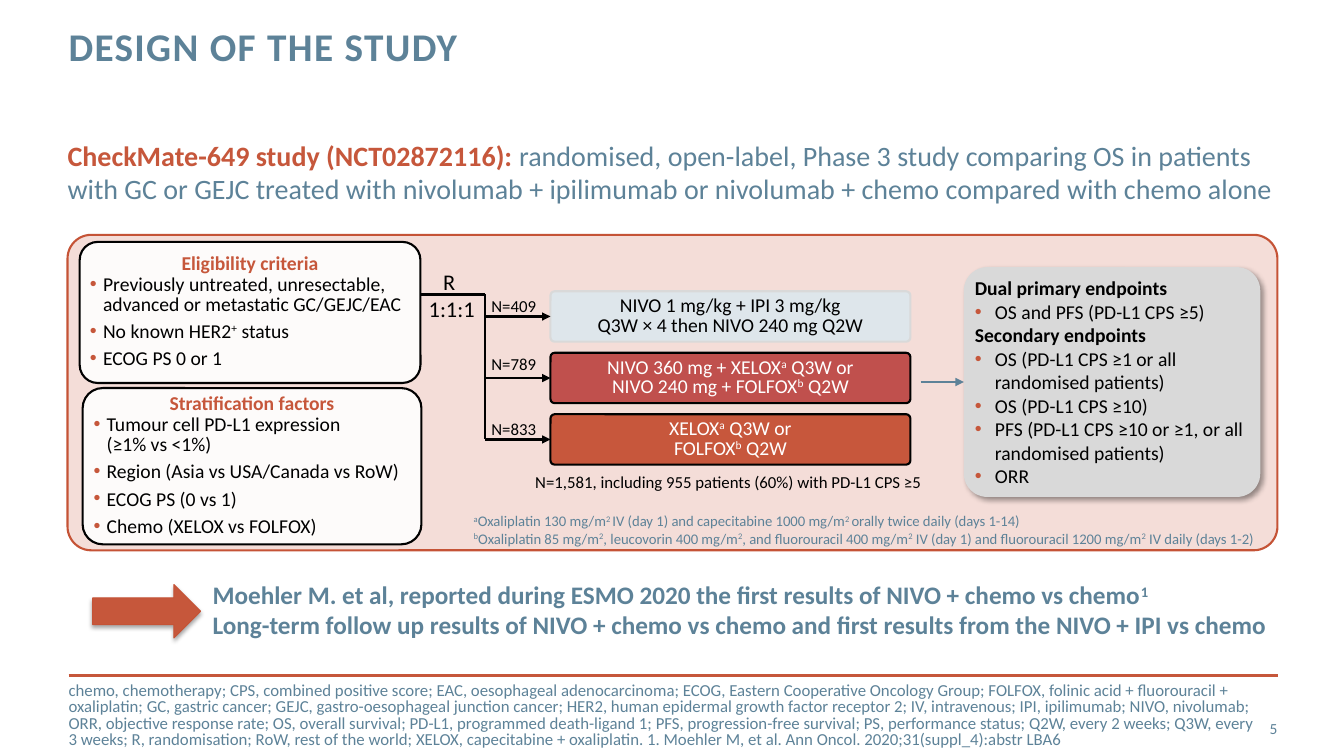
from dataclasses import dataclass
from typing import Optional

from lxml import etree
from pptx import Presentation
from pptx.dml.color import RGBColor
from pptx.enum.shapes import MSO_CONNECTOR, MSO_SHAPE
from pptx.enum.text import MSO_ANCHOR, PP_ALIGN
from pptx.oxml.ns import qn
from pptx.util import Inches, Pt

STRAIGHT = MSO_CONNECTOR.STRAIGHT
ROUNDED, RIGHT_ARROW = MSO_SHAPE.ROUNDED_RECTANGLE, MSO_SHAPE.RIGHT_ARROW
TOP, MIDDLE = MSO_ANCHOR.TOP, MSO_ANCHOR.MIDDLE
LEFT, CENTER, RIGHT = PP_ALIGN.LEFT, PP_ALIGN.CENTER, PP_ALIGN.RIGHT
FONT = "Calibri"
LEFT_SIDE = 1
COLORS = {
    "slate": "5D8298", "rust": "C6573B", "rust_edge": "C55336", "blush": "F4DDD8",
    "paper": "FDFBFA", "mist": "DEE6EB", "gray": "D9D9D9", "red": "C0504D",
    "orange": "C7573C", "black": "000000", "white": "FFFFFF",
}


@dataclass
class Para:
    """Text between ^ marks is superscript, between ~ marks bold rust."""
    text: str
    size: float = 14
    color: str = "black"
    bold: bool = False
    align: PP_ALIGN = LEFT
    indent: float = 0  # hanging indent of a bullet, in inches
    leading: Optional[float] = None  # a length, or a multiple of the line
    before: float = 0
    after: float = 0
    tracking: int = 0


@dataclass
class Box:
    left: float
    top: float
    width: float
    height: float


@dataclass
class Panel:
    box: Box
    fill: str
    edge: Optional[str] = None
    edge_width: float = 1.5
    corner: float = 0
    kind: MSO_SHAPE = ROUNDED


@dataclass
class Shadow:
    alpha: int
    blur: float
    distance: float
    angle: int


@dataclass
class Arm:
    patients: str
    label_top: float
    fill: str
    edge: str
    color: str
    lines: tuple[str, str]


def rgb(name: str) -> RGBColor:
    return RGBColor.from_string(COLORS[name])


def write(frame, paras: list[Para], insets=(0.1, 0.05, 0.1, 0.05), anchor=TOP, wrap=True) -> None:
    frame.word_wrap, frame.vertical_anchor = wrap, anchor
    (frame.margin_left, frame.margin_top,
     frame.margin_right, frame.margin_bottom) = map(Inches, insets)
    for index, para in enumerate(paras):
        p = frame.paragraphs[0] if index == 0 else frame.add_paragraph()
        p.alignment = para.align
        if para.indent:
            props = p._p.get_or_add_pPr()
            props.set("marL", str(Inches(para.indent)))
            props.set("indent", str(-Inches(para.indent)))
            tint = etree.SubElement(props, qn("a:buClr"))
            etree.SubElement(tint, qn("a:srgbClr"), val=COLORS["rust"])
            etree.SubElement(props, qn("a:buFont"), typeface="Arial")
            etree.SubElement(props, qn("a:buChar"), char="•")
        if para.leading:
            p.line_spacing = para.leading
        if para.before or para.after:
            p.space_before, p.space_after = Pt(para.before), Pt(para.after)
        p.font.name, p.font.size, p.font.bold = FONT, Pt(para.size), para.bold
        p.font.color.rgb = rgb(para.color)
        for row, line in enumerate(para.text.split("\n")):
            if row:
                p.add_line_break()
            for strong, phrase in enumerate(line.split("~")):
                for raised, piece in enumerate(phrase.split("^")):
                    if not piece:
                        continue
                    run = p.add_run()
                    run.text = piece
                    if raised % 2:
                        run._r.get_or_add_rPr().set("baseline", "30000")
                    if strong % 2:
                        run.font.bold, run.font.color.rgb = True, rgb("rust")
                    if para.tracking:
                        run._r.get_or_add_rPr().set("spc", str(para.tracking * 100))


def add_text(shapes, box: Box, paras: list[Para], **layout) -> None:
    area = shapes.add_textbox(*map(Inches, (box.left, box.top, box.width, box.height)))
    write(area.text_frame, paras, **layout)


def add_panel(shapes, panel: Panel, shadow: Optional[Shadow] = None):
    box = panel.box
    shape = shapes.add_shape(panel.kind, *map(Inches, (box.left, box.top, box.width, box.height)))
    shape.shadow.inherit = False
    if panel.corner:
        shape.adjustments[0] = panel.corner
    shape.fill.solid()
    shape.fill.fore_color.rgb = rgb(panel.fill)
    if panel.edge:
        shape.line.color.rgb, shape.line.width = rgb(panel.edge), Pt(panel.edge_width)
    else:
        shape.line.fill.background()
    if shadow:
        outer = etree.SubElement(
            shape._element.spPr.find(qn("a:effectLst")), qn("a:outerShdw"),
            blurRad=str(Pt(shadow.blur)), dist=str(Pt(shadow.distance)),
            dir=str(shadow.angle * 60000), rotWithShape="0")
        tint = etree.SubElement(outer, qn("a:srgbClr"), val=COLORS["black"])
        etree.SubElement(tint, qn("a:alpha"), val=str(shadow.alpha * 1000))
    return shape


def add_line(shapes, x1: float, y1: float, x2: float, y2: float,
             color: str = "black", width: float = 2, target=None) -> None:
    line = shapes.add_connector(STRAIGHT, *map(Inches, (x1, y1, x2, y2)))
    line.line.color.rgb, line.line.width = rgb(color), Pt(width)
    if target is not None:
        line.end_connect(target, LEFT_SIDE)
        etree.SubElement(line.line._get_or_add_ln(), qn("a:tailEnd"), type="triangle")
    etree.SubElement(line._element.spPr, qn("a:effectLst"))


def criteria(heading: str, items: list[str]) -> list[Para]:
    return [Para(heading, color="rust", bold=True, align=CENTER, leading=Pt(14))] + [
        Para(item, indent=0.13, leading=Pt(14), before=1, after=4.5) for item in items]


def endpoints(heading: str, items: list[str]) -> list[Para]:
    return [Para(heading, bold=True)] + [Para(item, indent=0.2) for item in items]


ABBREVIATIONS = (
    "chemo, chemotherapy; CPS, combined positive score; EAC, oesophageal adenocarcinoma; ECOG, Eastern "
    "Cooperative Oncology Group; FOLFOX, folinic acid + fluorouracil + oxaliplatin; GC, gastric cancer; GEJC, "
    "gastro-oesophageal junction cancer; HER2, human epidermal growth factor receptor 2; IV, intravenous; IPI, "
    "ipilimumab; NIVO, nivolumab; ORR, objective response rate; OS, overall survival; PD-L1, programmed "
    "death-ligand 1; PFS, progression-free survival; PS, performance status; Q2W, every 2 weeks; Q3W, every 3 "
    "weeks; R, randomisation; RoW, rest of the world; XELOX, capecitabine + oxaliplatin. 1. Moehler M, et al. "
    "Ann Oncol. 2020;31(suppl_4):abstr LBA6")
ARMS = [
    Arm("N=409", 2.88, "mist", "gray", "black",
        ("NIVO 1 mg/kg + IPI 3 mg/kg", "Q3W × 4 then NIVO 240 mg Q2W")),
    Arm("N=789", 3.46, "red", "black", "white",
        ("NIVO 360 mg + XELOX^a^ Q3W or", "NIVO 240 mg + FOLFOX^b^ Q2W")),
    Arm("N=833", 4.11, "orange", "black", "white", ("XELOX^a^ Q3W or", "FOLFOX^b^ Q2W")),
]
ARM_LEFT, ARM_TOP, ARM_STEP, ARM_HEIGHT = 5.46, 2.89, 0.61, 0.5
TRUNK_X, TRUNK_TOP = 4.81, 2.92
NO_INSETS = (0, 0, 0, 0)
TIGHT = (0.05, 0.05, 0.05, 0.05)


def main() -> None:
    prs = Presentation()
    prs.slide_width, prs.slide_height = Inches(13.33), Inches(7.5)
    shapes = prs.slides.add_slide(prs.slide_layouts[6]).shapes

    # Title, study summary and footer
    add_line(shapes, 0.68, 6.7, 12.68, 6.7, "rust")
    add_text(shapes, Box(11.81, 7.03, 0.86, 0.4), [Para("5", 11, "slate", align=RIGHT)],
             insets=NO_INSETS, anchor=MIDDLE)
    add_text(shapes, Box(0.68, 0.27, 9.56, 0.88),
             [Para("DESIGN OF THE STUDY", 28, "slate", True, leading=Pt(30), tracking=1)], insets=NO_INSETS)
    add_text(shapes, Box(0.68, 6.76, 11.82, 0.69), [Para(ABBREVIATIONS, 12, "slate", leading=0.8)],
             insets=NO_INSETS, anchor=MIDDLE)
    add_text(shapes, Box(0.67, 1.32, 12.22, 0.77), [Para(
        "~CheckMate-649 study (NCT02872116): ~randomised, open-label, Phase 3 study comparing OS in patients with "
        "GC or GEJC treated with nivolumab + ipilimumab or nivolumab + chemo compared with chemo alone",
        20, "slate")], insets=(0, 0.05, 0.1, 0.05))

    # Patients
    add_panel(shapes, Panel(Box(0.67, 2.33, 12, 3.13), "blush", "rust_edge", corner=0.075))
    add_line(shapes, 3.99, TRUNK_TOP, TRUNK_X, TRUNK_TOP, width=2.25)
    for box, paras in (
        (Box(0.79, 2.4, 3.38, 1.4), criteria("Eligibility criteria", [
            "Previously untreated, unresectable, advanced or metastatic GC/GEJC/EAC",
            "No known HER2^+^ status", "ECOG PS 0 or 1"])),
        (Box(0.82, 3.85, 3.36, 1.55), criteria("Stratification factors", [
            "Tumour cell PD-L1 expression \n(≥1% vs <1%)", "Region (Asia vs USA/Canada vs RoW)",
            "ECOG PS (0 vs 1)", "Chemo (XELOX vs FOLFOX)"])),
    ):
        patients = add_panel(shapes, Panel(box, "paper", "black", corner=0.128))
        write(patients.text_frame, paras, TIGHT, MIDDLE)

    # Randomisation and treatment arms
    add_text(shapes, Box(4.15, 2.61, 0.66, 0.64),
             [Para(line, 16, align=CENTER) for line in ("R ", "1:1:1")], wrap=False)
    for index, arm in enumerate(ARMS):
        top = ARM_TOP + index * ARM_STEP
        middle = top + ARM_HEIGHT / 2
        treatment = add_panel(shapes, Panel(
            Box(ARM_LEFT, top, 3.57, ARM_HEIGHT), arm.fill, arm.edge, corner=0.084))
        write(treatment.text_frame, [Para(line, color=arm.color, align=CENTER, leading=Pt(14))
                                     for line in arm.lines], TIGHT, MIDDLE)
        add_line(shapes, TRUNK_X, middle, ARM_LEFT, middle, target=treatment)
        add_text(shapes, Box(4.77, arm.label_top, 0.65, 0.3),
                 [Para(arm.patients, 12, align=CENTER)], wrap=False)
    add_line(shapes, TRUNK_X, TRUNK_TOP, TRUNK_X, middle)
    add_text(shapes, Box(5.11, 4.63, 4.23, 0.3),
             [Para("N=1,581, including 955 patients (60%) with PD-L1 CPS ≥5", 12, align=CENTER)])

    # Endpoints
    outcome = add_panel(shapes, Panel(Box(9.56, 2.65, 2.94, 2.28), "gray", corner=0.102), Shadow(40, 4, 3, 45))
    write(outcome.text_frame, endpoints("Dual primary endpoints", ["OS and PFS (PD-L1 CPS ≥5)"])
          + endpoints("Secondary endpoints", [
              "OS (PD-L1 CPS ≥1 or all randomised patients)", "OS (PD-L1 CPS ≥10)",
              "PFS (PD-L1 CPS ≥10 or ≥1, or all randomised patients)", "ORR"]),
          (0.04, 0.05, 0.04, 0.05), MIDDLE)
    add_line(shapes, 9.13, 3.79, 9.56, 3.79, "slate", target=outcome)

    # Dosing notes
    add_text(shapes, Box(4.6, 5.03, 8.21, 0.47), [Para(note, 10.5, "slate") for note in (
        "^a^Oxaliplatin 130 mg/m^2 ^IV (day 1) and capecitabine 1000 mg/m^2 ^orally twice daily (days 1-14)",
        "^b^Oxaliplatin 85 mg/m^2^, leucovorin 400 mg/m^2^, and fluorouracil 400 mg/m^2^ IV (day 1) "
        "and fluorouracil 1200 mg/m^2^ IV daily (days 1-2)")])

    # Reported results
    add_panel(shapes, Panel(Box(0.92, 5.8, 1.07, 0.53), "rust", "rust_edge", 0.75, kind=RIGHT_ARROW),
              Shadow(35, 3.1, 1.8, 90))
    add_text(shapes, Box(2.01, 5.7, 10.91, 0.71), [Para(result, 18, "slate", True) for result in (
        "Moehler M. et al, reported during ESMO 2020 the first results of NIVO + chemo vs chemo^1^",
        "Long-term follow up results of NIVO + chemo vs chemo and first results from the NIVO + IPI vs chemo")])

    prs.save("out.pptx")


if __name__ == "__main__":
    main()
